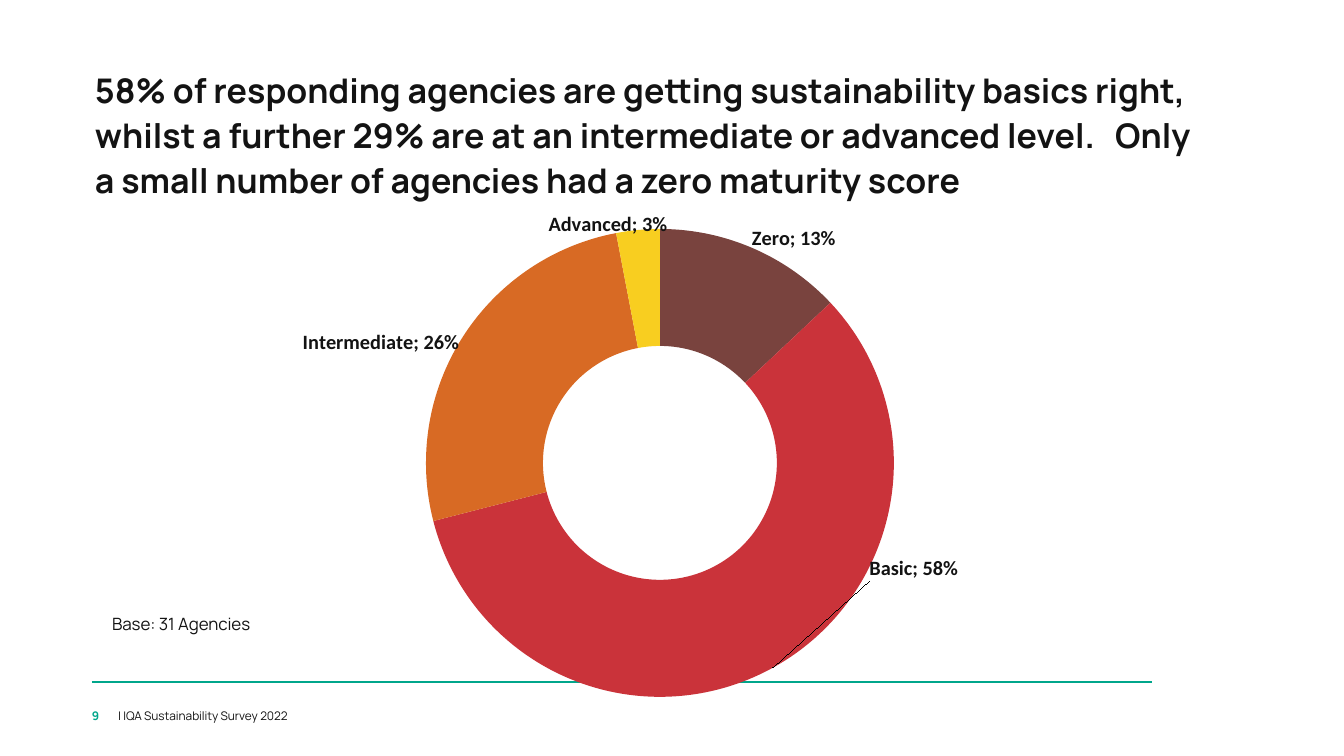
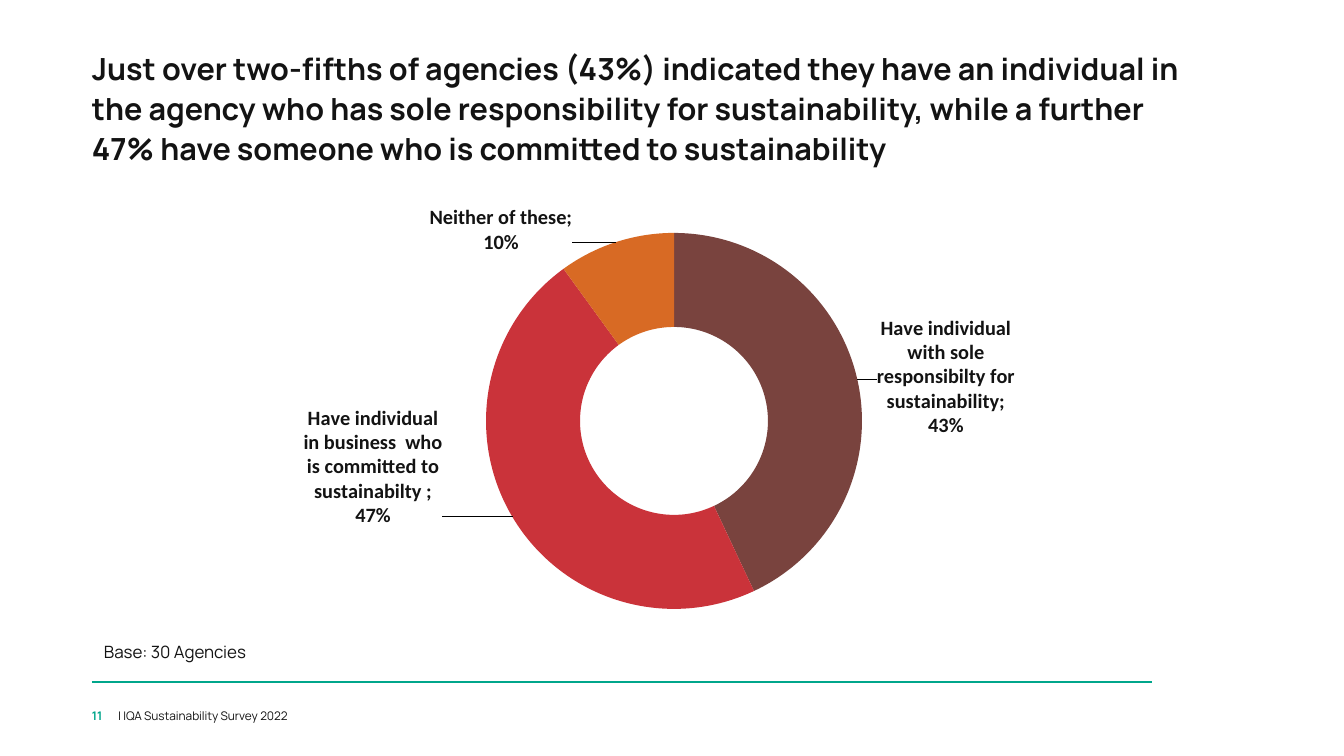
from dataclasses import dataclass
from math import cos, pi, sin

from pptx import Presentation
from pptx.chart.data import CategoryChartData
from pptx.dml.color import RGBColor
from pptx.enum.chart import XL_CHART_TYPE
from pptx.enum.shapes import MSO_CONNECTOR
from pptx.enum.text import MSO_AUTO_SIZE
from pptx.oxml import parse_xml
from pptx.oxml.ns import nsdecls, qn
from pptx.util import Pt

EMU_PER_PX = 914400 / 122
CHART_EXT_NS = "http://schemas.microsoft.com/office/drawing/2012/chart"
CHART_EXT_URI = "{CE6537A1-D6FC-4f65-9D91-7224C49458BB}"


@dataclass(frozen=True)
class Theme:
    font: str = "Manrope"
    chart_font: str = "Calibri"
    ink: str = "131313"
    accent: str = "00A68B"
    slices: tuple = ("79433E", "CA333A", "D86A24", "F8CE20")
    footer_size: int = 7
    base_size: int = 10
    label_size: int = 12
    line_width: float = 0.75


@dataclass(frozen=True)
class Slice:
    name: str
    value: float
    label_center: tuple


@dataclass(frozen=True)
class Ring:
    frame: tuple
    center: tuple
    radius: int
    slices: tuple
    label_box: tuple = ()


THEME = Theme()


def px(length):
    return round(length * EMU_PER_PX)


def rgb(color):
    return RGBColor.from_string(color)


def style_font(font, size, color=THEME.ink, bold=False, name=THEME.font):
    font.name = name
    font.size = Pt(size)
    font.bold = bold
    font.color.rgb = rgb(color)


def add_text(page, frame, text, size, color=THEME.ink, bold=False):
    box = page.shapes.add_textbox(*map(px, frame))
    text_frame = box.text_frame
    text_frame.word_wrap = True
    text_frame.margin_left = text_frame.margin_right = 0
    text_frame.margin_top = text_frame.margin_bottom = 0
    text_frame.text = text
    para = text_frame.paragraphs[0]
    para.line_spacing = 1.1
    para.space_after = Pt(3)
    style_font(para.runs[0].font, size, color, bold)


def add_base_note(page, frame, text):
    box = page.shapes.add_textbox(*map(px, frame))
    text_frame = box.text_frame
    text_frame.word_wrap = False
    text_frame.auto_size = MSO_AUTO_SIZE.SHAPE_TO_FIT_TEXT
    text_frame.text = text
    style_font(text_frame.paragraphs[0].runs[0].font, THEME.base_size)


def add_footer(page, number):
    rule = page.shapes.add_connector(
        MSO_CONNECTOR.STRAIGHT, px(92), px(682), px(1152), px(682))
    rule.line.color.rgb = rgb(THEME.accent)
    rule.line.width = Pt(THEME.line_width)
    rule._element.spPr.append(parse_xml(f"<a:effectLst {nsdecls('a')}/>"))
    add_text(page, (118, 707, 426, 16), "| IQA Sustainability Survey 2022",
             THEME.footer_size)
    add_text(page, (92, 707, 27, 16), str(number), THEME.footer_size,
             THEME.accent, True)


def set_plot_area(chart, ring):
    left, top, width, height = ring.frame
    x = (ring.center[0] - ring.radius - left) / width
    y = (ring.center[1] - ring.radius - top) / height
    plot_area = chart._chartSpace.chart.plotArea
    for layout in plot_area.findall(qn("c:layout")):
        plot_area.remove(layout)
    plot_area.insert(0, parse_xml(
        f'<c:layout {nsdecls("c")}><c:manualLayout>'
        '<c:layoutTarget val="inner"/>'
        '<c:xMode val="edge"/><c:yMode val="edge"/>'
        f'<c:x val="{x:.4f}"/><c:y val="{y:.4f}"/>'
        f'<c:w val="{2 * ring.radius / width:.4f}"/>'
        f'<c:h val="{2 * ring.radius / height:.4f}"/>'
        '</c:manualLayout></c:layout>'))


def label_offset(ring, index):
    before = sum(piece.value for piece in ring.slices[:index])
    piece = ring.slices[index]
    angle = 2 * pi * (before + piece.value / 2)
    middle = 0.75 * ring.radius
    x = ring.center[0] + middle * sin(angle)
    y = ring.center[1] - middle * cos(angle)
    return ((piece.label_center[0] - x) / ring.frame[2],
            (piece.label_center[1] - y) / ring.frame[3])


def format_label(series, ring, index):
    style_font(series.points[index].data_label.font, THEME.label_size,
               bold=True, name=THEME.chart_font)
    label = series._element.xpath(f'c:dLbls/c:dLbl[c:idx/@val="{index}"]')[0]
    label.find(qn("c:showCatName")).set("val", "1")
    x, y = label_offset(ring, index)
    number_format = parse_xml(
        f'<c:numFmt {nsdecls("c")} formatCode="0%" sourceLinked="0"/>')
    layout = parse_xml(
        f'<c:layout {nsdecls("c")}><c:manualLayout>'
        f'<c:x val="{x:.4f}"/><c:y val="{y:.4f}"/>'
        '</c:manualLayout></c:layout>')
    position = label.find(qn("c:idx"))
    position.addnext(number_format)
    position.addnext(layout)
    label.append(parse_xml(
        f'<c:separator {nsdecls("c")}>; </c:separator>'))
    if ring.label_box:
        width = ring.label_box[0] / ring.frame[2]
        height = ring.label_box[1] / ring.frame[3]
        label.append(parse_xml(
            f'<c:extLst {nsdecls("c")}><c:ext uri="{CHART_EXT_URI}" '
            f'xmlns:c15="{CHART_EXT_NS}"><c15:layout><c:manualLayout>'
            f'<c:w val="{width:.4f}"/><c:h val="{height:.4f}"/>'
            '</c:manualLayout></c15:layout></c:ext></c:extLst>'))


def add_ring(page, ring):
    data = CategoryChartData(number_format="0%")
    data.categories = [piece.name for piece in ring.slices]
    data.add_series("Series 1", [piece.value for piece in ring.slices])
    chart = page.shapes.add_chart(
        XL_CHART_TYPE.DOUGHNUT, *map(px, ring.frame), data).chart
    chart.has_legend = False
    chart.has_title = False
    style_font(chart.font, THEME.base_size, name=THEME.chart_font)
    set_plot_area(chart, ring)
    plot = chart.plots[0]
    plot.vary_by_categories = True
    series = plot.series[0]
    for index, color in enumerate(THEME.slices[:len(ring.slices)]):
        slice_format = series.points[index].format
        slice_format.fill.solid()
        slice_format.fill.fore_color.rgb = rgb(color)
        slice_format.line.fill.background()
        format_label(series, ring, index)


def add_page(deck, number, title, title_frame, title_size, ring, base, base_frame):
    page = deck.slides.add_slide(deck.slide_layouts[6])
    add_footer(page, number)
    add_text(page, title_frame, title, title_size, bold=True)
    add_ring(page, ring)
    add_base_note(page, base_frame, base)


def main():
    deck = Presentation()
    deck.slide_width = px(1344)
    deck.slide_height = px(756)

    maturity = Ring((145, 212, 1028, 503), (660, 463), 234, (
        Slice("Zero", 0.13, (794, 238)),
        Slice("Basic", 0.58, (914, 569)),
        Slice("Intermediate", 0.26, (381, 343)),
        Slice("Advanced", 0.03, (608, 224)),
    ))
    add_page(
        deck, 9,
        "58% of responding agencies are getting sustainability basics right, "
        "whilst a further 29% are at an intermediate or advanced level.   "
        "Only a small number of agencies had a zero maturity score",
        (95, 66, 1120, 39), 20, maturity,
        "Base: 31 Agencies", (100, 608, 165, 33))

    responsibility = Ring((137, 200, 1075, 468), (674, 421), 188, (
        Slice("Have individual with sole responsibilty for sustainability",
              0.43, (946, 377)),
        Slice("Have individual in business  who is committed to sustainabilty ",
              0.47, (373, 467)),
        Slice("Neither of these", 0.1, (501, 230)),
    ), (150, 126))
    add_page(
        deck, 11,
        "Just over two-fifths of agencies (43%) indicated they have an "
        "individual in the agency who has sole responsibility for "
        "sustainability, while a further 47% have someone who is committed "
        "to sustainability",
        (92, 46, 1120, 115), 18, responsibility,
        "Base: 30 Agencies", (92, 636, 168, 33))

    deck.save("out.pptx")


if __name__ == "__main__":
    main()
